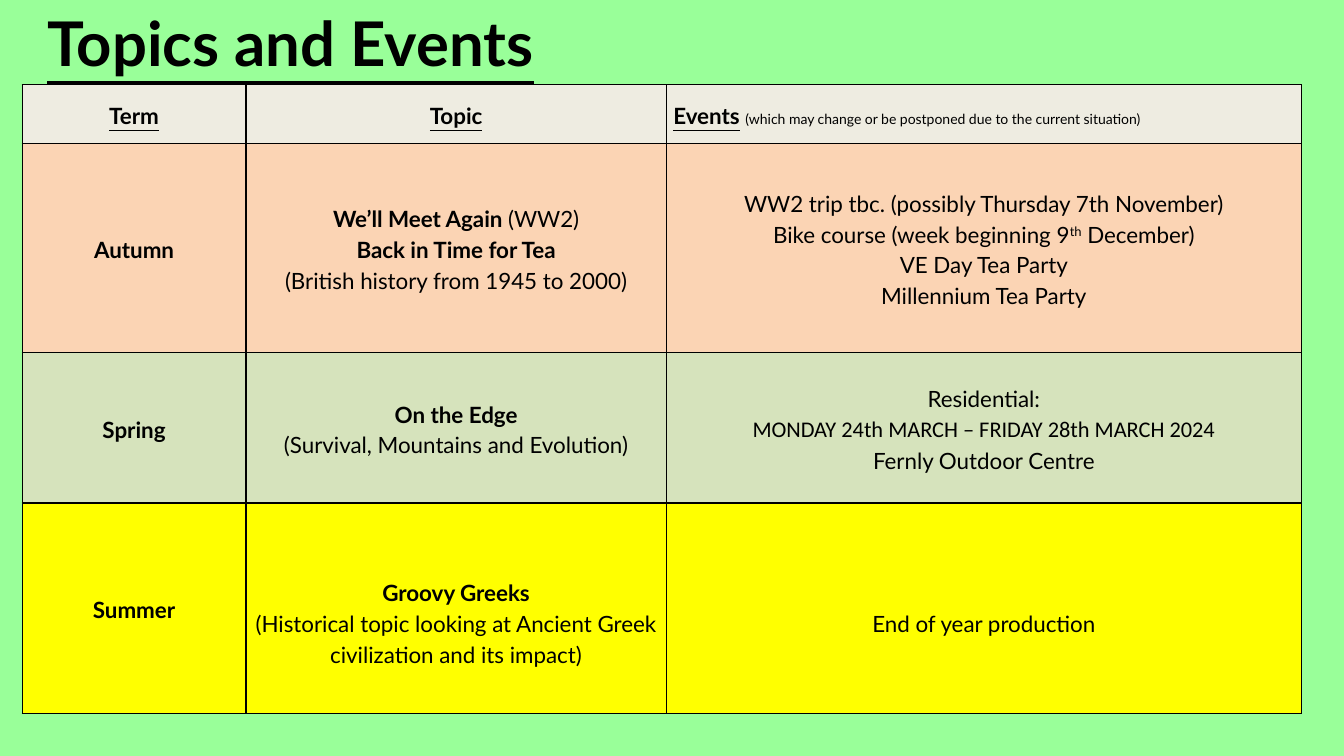
from dataclasses import dataclass

import pptx
import pptx.dml.color
import pptx.enum.text
import pptx.oxml
import pptx.oxml.ns
import pptx.util

ALIGN = pptx.enum.text.PP_ALIGN
BLACK = "000000"


@dataclass
class Run:
    text: str
    bold: bool = False
    underline: bool = False
    size: float = 16
    raised: bool = False


@dataclass
class Para:
    runs: list[Run]
    align: ALIGN = ALIGN.CENTER
    font: str = "Lato"


@dataclass
class Cell:
    paras: list[Para]
    top: float = 0  # top margin in inches


@dataclass
class Row:
    height: float  # percent of slide height
    fill: str
    cells: list[Cell]


def plain(text: str, font: str = "Lato") -> Para:
    return Para([Run(text)], font=font)


def bold(text: str, underline: bool = False) -> Para:
    return Para([Run(text, True, underline)])


def rgb(color: str) -> pptx.dml.color.RGBColor:
    return pptx.dml.color.RGBColor.from_string(color)


prs = pptx.Presentation()
prs.slide_width = pptx.util.Inches(13.33)
prs.slide_height = pptx.util.Inches(7.5)


def x(percent: float) -> int:
    return round(prs.slide_width * percent / 100)


def y(percent: float) -> int:
    return round(prs.slide_height * percent / 100)


def write(p, para: Para) -> None:
    p.alignment = para.align
    p.font.name = para.font
    p.font.color.rgb = rgb(BLACK)
    for run in para.runs:
        r = p.add_run()
        r.text = run.text
        if run.raised:
            r.font._element.set("baseline", "30000")
    for field in ("size", "bold", "underline"):
        values = [getattr(run, field) for run in para.runs]
        shared = len(set(values)) == 1
        fonts = [p.font] if shared else [r.font for r in p.runs]
        for font, value in zip(fonts, values):
            setattr(font, field, pptx.util.Pt(value) if field == "size" else value)


def fill_text(tf, paras: list[Para], spacing: float) -> None:
    for i, para in enumerate(paras):
        p = tf.add_paragraph() if i else tf.paragraphs[0]
        p.line_spacing = spacing
        write(p, para)


def add_borders(cell) -> None:
    tc_pr = cell._tc.get_or_add_tcPr()
    for i, side in enumerate("LRTB"):
        tc_pr.insert(i, pptx.oxml.parse_xml(
            f'<a:ln{side} {pptx.oxml.ns.nsdecls("a")} w="12700"><a:solidFill>'
            f'<a:srgbClr val="{BLACK}"/></a:solidFill></a:ln{side}>'))


def draw_cell(cell, content: Cell, fill: str) -> None:
    cell.fill.solid()
    cell.fill.fore_color.rgb = rgb(fill)
    cell.vertical_anchor = pptx.enum.text.MSO_ANCHOR.MIDDLE
    cell.margin_left = cell.margin_right = pptx.util.Inches(0.07)
    cell.margin_top = pptx.util.Inches(content.top)
    cell.margin_bottom = 0
    fill_text(cell.text_frame, content.paras, 1.15)
    add_borders(cell)


COLUMNS = [16.65, 31.28, 47.26]  # percent of slide width
LEFT, TOP = 1.65, 11.2
LINE = 0.27  # one line of table text, in inches

ROWS = [
    Row(7.73, "EEECE1", [
        Cell([bold("Term", underline=True)]),
        Cell([bold("Topic", underline=True)]),
        Cell([Para([
            Run("Events", True, True), Run(" "),
            Run("(which may change or be postponed due to the current situation)", size=10),
        ], ALIGN.LEFT)]),
    ]),
    Row(27.73, "FBD4B4", [
        Cell([bold("Autumn")]),
        Cell([
            Para([Run("We’ll Meet Again ", True), Run("(WW2)")]),
            bold("Back in Time for Tea"),
            plain("(British history from 1945 to 2000)"),
        ]),
        Cell([
            plain("WW2 trip tbc. (possibly Thursday 7th November)"),
            Para([Run("Bike course (week beginning 9"), Run("th", raised=True),
                  Run(" December)")]),
            plain("VE Day Tea Party"),
            plain("Millennium Tea Party"),
        ]),
    ]),
    Row(19.87, "D6E3BC", [
        Cell([bold("Spring")]),
        Cell([bold("On the Edge"), plain("(Survival, Mountains and Evolution)")]),
        Cell([
            plain("Residential:"),
            plain("MONDAY 24th MARCH – FRIDAY 28th MARCH 2024", "Calibri"),
            plain("Fernly Outdoor Centre"),
        ]),
    ]),
    Row(27.87, "FFFF00", [
        Cell([bold("Summer")]),
        Cell([
            bold("Groovy Greeks"),
            plain("(Historical topic looking at Ancient Greek civilization and its impact)"),
        ], LINE),
        Cell([plain("End of year production")], LINE),
    ]),
]

# Slide and background
s = prs.slides.add_slide(prs.slide_layouts[6])
s.background.fill.solid()
s.background.fill.fore_color.rgb = rgb("99FF99")

# Table of terms
table = s.shapes.add_table(
    len(ROWS), len(COLUMNS), x(LEFT), y(TOP),
    x(sum(COLUMNS)), y(sum(row.height for row in ROWS))).table
table.first_row = table.horz_banding = False
for column, width in zip(table.columns, COLUMNS):
    column.width = x(width)
for i, row in enumerate(ROWS):
    table.rows[i].height = y(row.height)
    for j, content in enumerate(row.cells):
        draw_cell(table.cell(i, j), content, row.fill)

# Title
sp = s.shapes.add_textbox(x(2.78), 0, x(39.61), y(TOP))
sp.text_frame.word_wrap = False
title = Para([Run("Topics and Events", True, True, 44)], ALIGN.LEFT)
fill_text(sp.text_frame, [title], 1.0)

prs.save("out.pptx")
